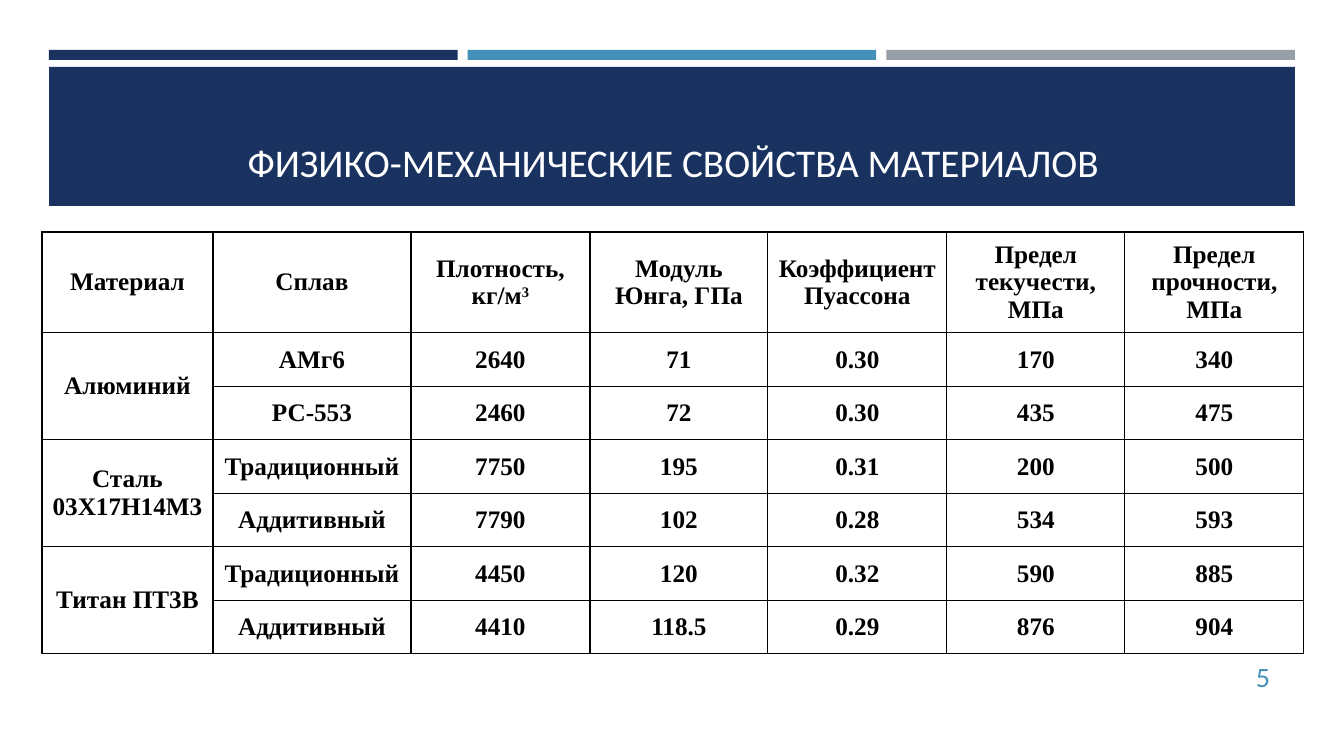
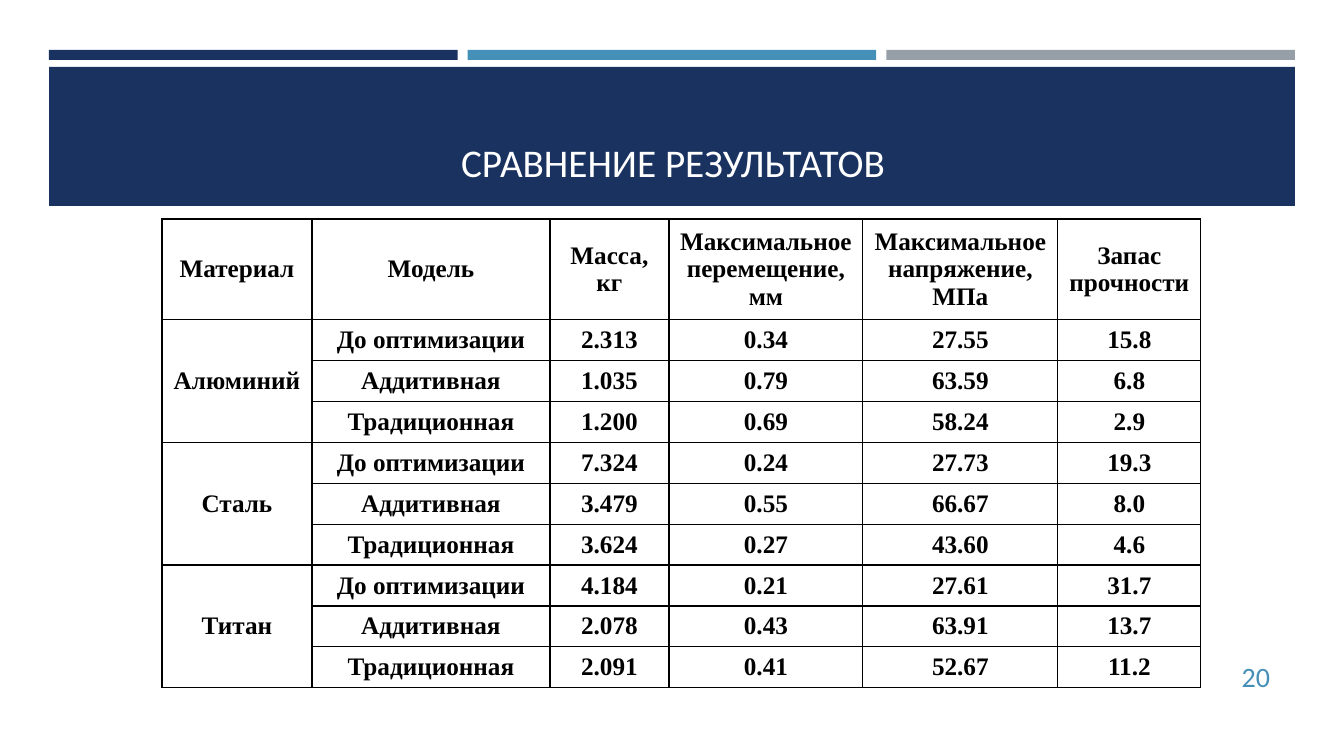
import dataclasses

import lxml.etree
import pptx
import pptx.dml.color
import pptx.enum.shapes
import pptx.enum.text
import pptx.oxml.ns
import pptx.util

SLIDE_WIDTH, SLIDE_HEIGHT = 1344, 756
PX = 12192000 / SLIDE_WIDTH

SLIDES = [
    {
        "title": "ФИЗИКО-МЕХАНИЧЕСКИЕ СВОЙСТВА МАТЕРИАЛОВ",
        "number": "5",
        "left": 42, "top": 232, "header_height": 94, "body_height": 321,
        "columns": [
            ("Материал", 171), ("Сплав", 198), ("Плотность, кг/м^3", 179),
            ("Модуль Юнга, ГПа", 178), ("Коэффициент Пуассона", 179),
            ("Предел текучести, МПа", 178), ("Предел прочности, МПа", 179),
        ],
        "groups": {
            "Алюминий": [
                ("АМг6", "2640", "71", "0.30", "170", "340"),
                ("РС-553", "2460", "72", "0.30", "435", "475"),
            ],
            "Сталь 03Х17Н14М3": [
                ("Традиционный", "7750", "195", "0.31", "200", "500"),
                ("Аддитивный", "7790", "102", "0.28", "534", "593"),
            ],
            "Титан ПТ3В": [
                ("Традиционный", "4450", "120", "0.32", "590", "885"),
                ("Аддитивный", "4410", "118.5", "0.29", "876", "904"),
            ],
        },
    },
    {
        "title": "СРАВНЕНИЕ РЕЗУЛЬТАТОВ",
        "number": "20",
        "left": 162, "top": 219, "header_height": 94, "body_height": 368,
        "columns": [
            ("Материал", 150), ("Модель", 238), ("Масса, кг", 119),
            ("Максимальное перемещение, мм", 194),
            ("Максимальное напряжение, МПа", 195), ("Запас прочности", 143),
        ],
        "groups": {
            "Алюминий": [
                ("До оптимизации", "2.313", "0.34", "27.55", "15.8"),
                ("Аддитивная", "1.035", "0.79", "63.59", "6.8"),
                ("Традиционная", "1.200", "0.69", "58.24", "2.9"),
            ],
            "Сталь": [
                ("До оптимизации", "7.324", "0.24", "27.73", "19.3"),
                ("Аддитивная", "3.479", "0.55", "66.67", "8.0"),
                ("Традиционная", "3.624", "0.27", "43.60", "4.6"),
            ],
            "Титан": [
                ("До оптимизации", "4.184", "0.21", "27.61", "31.7"),
                ("Аддитивная", "2.078", "0.43", "63.91", "13.7"),
                ("Традиционная", "2.091", "0.41", "52.67", "11.2"),
            ],
        },
    },
]


@dataclasses.dataclass(frozen=True)
class Theme:
    navy: str = "1A3260"
    blue: str = "4590B8"
    gray: str = "969FA7"
    white: str = "FFFFFF"
    black: str = "000000"
    heading_font: str = "Calibri"
    table_font: str = "Times New Roman"
    title_size: int = 28
    number_size: int = 20
    table_size: int = 18
    border_width: int = 1


THEME = Theme()
BAND_LEFT, BAND_WIDTH = 49, 1246
STRIPE_TOP, STRIPE_HEIGHT, STRIPE_GAP = 50, 10, 10
STRIPE_COLORS = (THEME.navy, THEME.blue, THEME.gray)
TITLE_BAND = (BAND_LEFT, 67, BAND_WIDTH, 139)
TITLE_BOX = (65, 81, 1216, 109)
NUMBER_BOX = (1164, 656, 116, 40)
CELL_MARGIN = 8


def emu(pixels):
    return pptx.util.Emu(round(pixels * PX))


def rgb(color):
    return pptx.dml.color.RGBColor.from_string(color)


def write_text(text_frame, text, *, font, size, color, bold=False,
               align="CENTER", anchor="MIDDLE"):
    """Fill the frame; the part after ^ becomes superscript."""
    text_frame.word_wrap = True
    text_frame.vertical_anchor = pptx.enum.text.MSO_ANCHOR[anchor]
    paragraph = text_frame.paragraphs[0]
    paragraph.alignment = pptx.enum.text.PP_ALIGN[align]
    for index, part in enumerate(text.split("^")):
        run = paragraph.add_run()
        run.text = part
        run.font.name = font
        run.font.size = pptx.util.Pt(size)
        run.font.bold = bold
        run.font.color.rgb = rgb(color)
        if index:
            run.font._element.set("baseline", "30000")


def add_band(slide, layout, box, color):
    """Draw a rectangle and move it to the back of the shared layout."""
    shape = slide.shapes.add_shape(
        pptx.enum.shapes.MSO_SHAPE.RECTANGLE, *map(emu, box))
    shape.shadow.inherit = False
    shape.fill.solid()
    shape.fill.fore_color.rgb = rgb(color)
    shape.line.fill.background()
    tree = layout.shapes.element
    used_ids = [int(value) for value in tree.xpath(".//p:cNvPr/@id")]
    shape.element.nvSpPr.cNvPr.set("id", str(max(used_ids) + 1))
    tree.insert(2, shape.element)


def add_layout_bands(slide, layout):
    count = len(STRIPE_COLORS)
    width = (BAND_WIDTH - STRIPE_GAP * (count - 1)) / count
    for index, color in enumerate(STRIPE_COLORS):
        left = BAND_LEFT + index * (width + STRIPE_GAP)
        add_band(slide, layout, (left, STRIPE_TOP, width, STRIPE_HEIGHT), color)
    add_band(slide, layout, TITLE_BAND, THEME.navy)


def add_borders(cell):
    properties = cell._tc.get_or_add_tcPr()
    for index, side in enumerate(("lnL", "lnR", "lnT", "lnB")):
        line = lxml.etree.Element(
            pptx.oxml.ns.qn("a:" + side),
            w=str(pptx.util.Pt(THEME.border_width)))
        fill = lxml.etree.SubElement(line, pptx.oxml.ns.qn("a:solidFill"))
        lxml.etree.SubElement(
            fill, pptx.oxml.ns.qn("a:srgbClr"), val=THEME.black)
        properties.insert(index, line)


def format_cell(cell, text):
    cell.fill.solid()
    cell.fill.fore_color.rgb = rgb(THEME.white)
    cell.margin_left = cell.margin_right = emu(CELL_MARGIN)
    cell.vertical_anchor = pptx.enum.text.MSO_ANCHOR.MIDDLE
    add_borders(cell)
    paragraph_format = dict(font=THEME.table_font, size=THEME.table_size,
                            color=THEME.black, bold=True)
    write_text(cell.text_frame, text, **paragraph_format)


def add_material_table(slide, content):
    names, widths = zip(*content["columns"])
    rows = [names]
    spans = []
    for material, records in content["groups"].items():
        spans.append((len(rows), len(rows) + len(records) - 1))
        for index, record in enumerate(records):
            rows.append(("" if index else material, *record))

    body_row = content["body_height"] / (len(rows) - 1)
    heights = [content["header_height"]] + [body_row] * (len(rows) - 1)
    table = slide.shapes.add_table(
        len(rows), len(names), emu(content["left"]), emu(content["top"]),
        emu(sum(widths)), emu(sum(heights))).table
    table.first_row = table.horz_banding = False
    for column, width in zip(table.columns, widths):
        column.width = emu(width)
    for row, height, texts in zip(table.rows, heights, rows):
        row.height = emu(height)
        for cell, text in zip(row.cells, texts):
            format_cell(cell, text)
    for first, last in spans:
        table.cell(first, 0).merge(table.cell(last, 0))


def add_title(slide, text):
    title = slide.shapes.title
    title.left, title.top, title.width, title.height = map(emu, TITLE_BOX)
    title.text_frame.auto_size = pptx.enum.text.MSO_AUTO_SIZE.NONE
    write_text(title.text_frame, text, font=THEME.heading_font,
               size=THEME.title_size, color=THEME.white, anchor="BOTTOM")


def add_number(slide, text):
    box = slide.shapes.add_textbox(*map(emu, NUMBER_BOX))
    write_text(box.text_frame, text, font=THEME.heading_font,
               size=THEME.number_size, color=THEME.blue, align="RIGHT")


def main():
    presentation = pptx.Presentation()
    presentation.slide_width = emu(SLIDE_WIDTH)
    presentation.slide_height = emu(SLIDE_HEIGHT)
    layout = presentation.slide_layouts.get_by_name("Title Only")
    for index, content in enumerate(SLIDES):
        slide = presentation.slides.add_slide(layout)
        if index == 0:
            add_layout_bands(slide, layout)
        add_title(slide, content["title"])
        add_number(slide, content["number"])
        add_material_table(slide, content)
    presentation.save("out.pptx")


if __name__ == "__main__":
    main()
